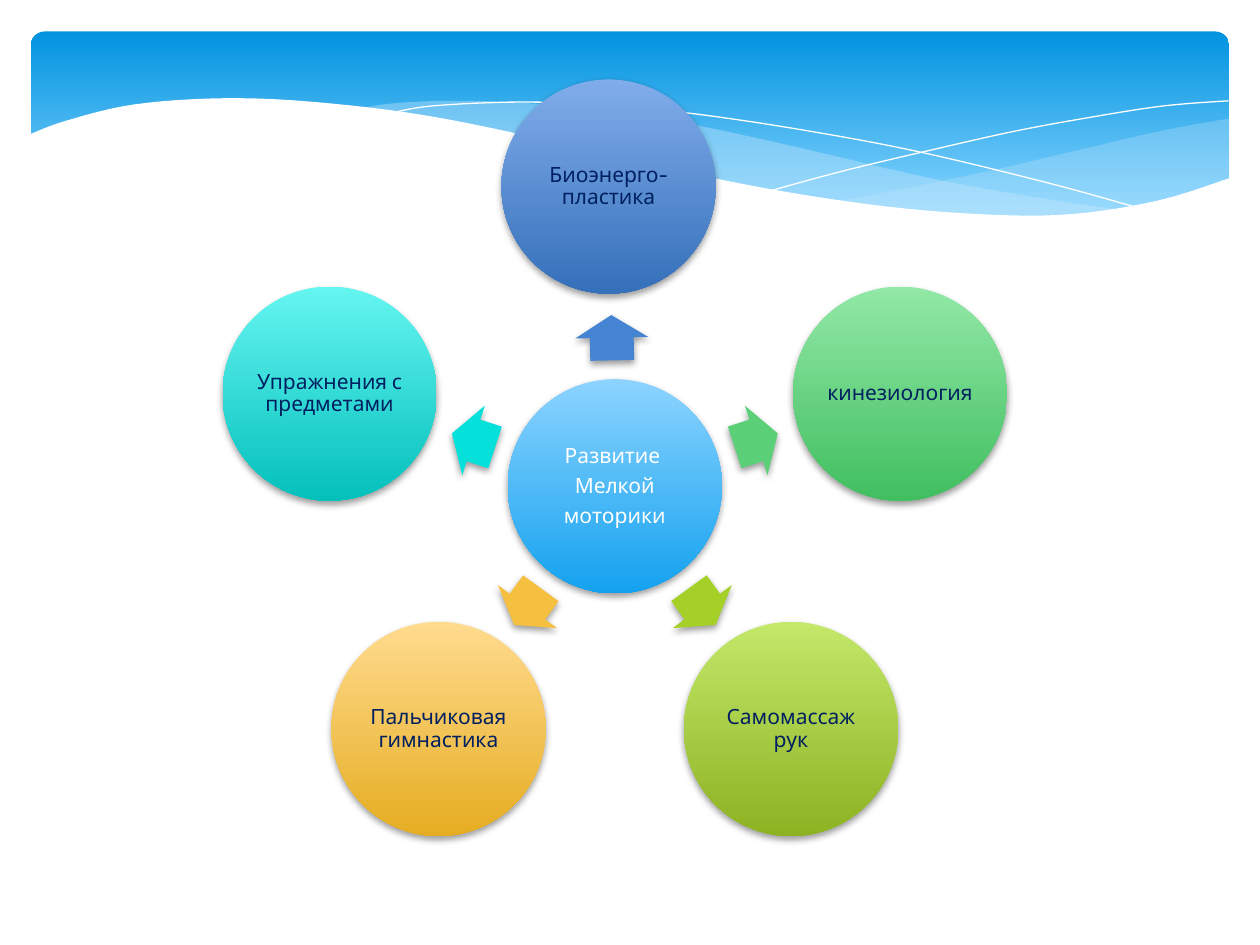
from math import cos, radians, sin

from lxml.etree import SubElement
from pptx import Presentation
from pptx.dml.color import RGBColor
from pptx.enum.shapes import MSO_SHAPE as SHAPE
from pptx.enum.text import MSO_ANCHOR as ANCHOR, PP_ALIGN as ALIGN
from pptx.oxml.ns import qn
from pptx.util import Inches, Pt

COLORS = {
    "white": "FFFFFF", "navy": "002060", "mist": "C6E7FC", "shadow": "000000",
    "sky_top": "0293E0", "sky_bottom": "83D3FE",
    "hub_top": "8CD3FF", "hub_bottom": "14A2EF",
    "blue": "4584D3", "blue_top": "80ACEA", "blue_bottom": "3570BA",
    "green": "5BD078", "green_top": "92E8A6", "green_bottom": "41BF60",
    "lime": "A5D028", "lime_top": "C3E86A", "lime_bottom": "8DB222",
    "amber": "F5C040", "amber_top": "FFDB8E", "amber_bottom": "E6AD22",
    "teal": "05E0DB", "teal_top": "65F5F1", "teal_bottom": "04C0BB",
}
FONT = "Cabin"
CENTER_X, CENTER_Y = 4.88, 3.86
NODE_RADIUS, ARROW_RADIUS = 2.38, 1.18
DIAMETER, ARROW_W, ARROW_H = 1.7, 0.36, 0.58
NODES = [
    ("Биоэнерго-пластика", "blue", 268.8),
    ("кинезиология", "green", 342),
    ("Самомассаж рук", "lime", 54),
    ("Пальчиковая гимнастика", "amber", 126),
    ("Упражнения с предметами", "teal", 198),
]
RIGHT_BAND = [
    [(9.76, 0.94), (9.21, 1.04), (8.61, 1.18), (7.79, 1.37), (7.06, 1.52), (6.61, 1.6)],
    [(6.61, 1.6), (7.19, 1.67), (7.69, 1.71), (8.24, 1.72), (8.72, 1.69),
     (9.21, 1.6), (9.49, 1.52), (9.76, 1.41)],
]
LONG_BAND = [
    [(8.93, 1.67), (8.37, 1.59), (7.41, 1.42), (6.29, 1.16), (5.55, 1), (4.89, 0.89),
     (4.2, 0.82), (3.61, 0.8), (3.13, 0.82), (2.86, 0.86)],
    [(2.86, 0.86), (3.62, 0.97), (4.49, 1.16), (5.3, 1.35), (6.01, 1.5), (6.8, 1.63),
     (7.48, 1.7), (8.07, 1.73), (8.57, 1.71), (8.93, 1.67)],
]
FALLING_LINE = [
    [(3.09, 0.9), (3.44, 0.84), (4.16, 0.81), (4.89, 0.84), (5.56, 0.91), (6.36, 1.03),
     (7.27, 1.2), (8.31, 1.45), (9.07, 1.66)],
]
RISING_LINE = [
    [(6.13, 1.51), (6.72, 1.35), (7.48, 1.17), (8.06, 1.04), (8.66, 0.93),
     (9.24, 0.84), (9.75, 0.8)],
]
WHITE_WAVE = [
    [(9.77, 1.41), (9.2, 1.59), (8.5, 1.7), (7.78, 1.7), (6.88, 1.62), (5.79, 1.44),
     (4.47, 1.14), (3.4, 0.92), (2.5, 0.81), (1.77, 0.78), (1.06, 0.83),
     (0.52, 0.96), (0.23, 1.07)],
    [(0.23, 2.24), (9.77, 2.24)],
]


def rgb(name):
    """Return the named palette colour."""
    return RGBColor.from_string(COLORS[name])


def set_alpha(color, percent):
    """Add an opacity to a colour element."""
    SubElement(color, qn("a:alpha"), val=str(percent * 1000))


def smooth(points, steps=6):
    """Return points along a Catmull-Rom curve through the given points."""
    padded = [points[0], *points, points[-1]]
    curve = [points[0]]
    for a, b, c, d in zip(padded, padded[1:], padded[2:], padded[3:]):
        for step in range(1, steps + 1):
            t = step / steps
            curve.append(tuple(
                q + t * (r - p) / 2 + t**2 * (2 * p - 5 * q + 4 * r - s) / 2
                + t**3 * (3 * q - p - 3 * r + s) / 2
                for p, q, r, s in zip(a, b, c, d)))
    return curve


def add_wave(slide, curves, fill=None, alpha=100):
    """Draw a filled band, or a white hairline when no fill is given."""
    points = [(Inches(x), Inches(y)) for curve in curves for x, y in smooth(curve)]
    builder = slide.shapes.build_freeform(*points[0])
    builder.add_line_segments(points[1:], close=fill is not None)
    sp = builder.convert_to_shape()
    sp.shadow.inherit = False
    if fill is None:
        sp.fill.background()
        sp.line.color.rgb = rgb("white")
        sp.line.width = Pt(0)
        return
    sp.fill.solid()
    sp.fill.fore_color.rgb = rgb(fill)
    sp.line.fill.background()
    if alpha < 100:
        set_alpha(sp.element.spPr.find(f"{qn('a:solidFill')}/{qn('a:srgbClr')}"), alpha)


def set_gradient(sp, name, end=1.0):
    """Fill a shape from the named top colour down to its bottom colour."""
    sp.fill.gradient()
    sp.fill.gradient_angle = 270
    first, last = sp.fill.gradient_stops
    first.color.rgb, first.position = rgb(f"{name}_top"), 0
    last.color.rgb, last.position = rgb(f"{name}_bottom"), end


def add_plain_shape(slide, kind, x, y, w, h):
    """Add an unlined shape without shadow, centred on a point."""
    sp = slide.shapes.add_shape(
        kind, Inches(x - w / 2), Inches(y - h / 2), Inches(w), Inches(h))
    sp.shadow.inherit = False
    sp.line.fill.background()
    return sp


def add_shadow(sp):
    """Give a shape a soft shadow straight below it."""
    effects = sp.element.spPr.find(qn("a:effectLst"))
    shadow = SubElement(effects, qn("a:outerShdw"), blurRad=str(Pt(4)),
                        dist=str(Pt(2)), dir="5400000", rotWithShape="0")
    color = SubElement(shadow, qn("a:srgbClr"), val=COLORS["shadow"])
    set_alpha(color, 38)


def add_circle(slide, text, color, x, y, text_color="navy"):
    """Add a gradient circle with centred text."""
    sp = add_plain_shape(slide, SHAPE.OVAL, x, y, DIAMETER, DIAMETER)
    set_gradient(sp, color)
    add_shadow(sp)
    tf = sp.text_frame
    tf.text = text
    tf.word_wrap = True
    tf.vertical_anchor = ANCHOR.MIDDLE
    tf.margin_left = tf.margin_right = tf.margin_top = tf.margin_bottom = Inches(0.02)
    for p in tf.paragraphs:
        p.alignment = ALIGN.CENTER
        p.line_spacing = 0.9
        p.space_after = Pt(4.2)
        for r in p.runs:
            r.font.name = FONT
            r.font.size = Pt(12)
            r.font.color.rgb = rgb(text_color)


def add_arrow(slide, color, x, y, angle):
    """Add a block arrow turned to point outwards."""
    sp = add_plain_shape(slide, SHAPE.RIGHT_ARROW, x, y, ARROW_W, ARROW_H)
    sp.adjustments[0], sp.adjustments[1] = 0.6, 0.5
    sp.rotation = angle
    sp.fill.solid()
    sp.fill.fore_color.rgb = rgb(color)
    add_shadow(sp)


def around_center(radius, angle):
    """Return the point at a radius and clockwise angle from the hub."""
    turn = radians(angle)
    return CENTER_X + radius * cos(turn), CENTER_Y + radius * sin(turn)


def add_header(slide):
    """Draw the sky panel and its waves."""
    panel = add_plain_shape(slide, SHAPE.ROUNDED_RECTANGLE, 5, 1.03, 9.51, 1.56)
    panel.adjustments[0] = 0.07
    set_gradient(panel, "sky", 0.9)
    add_wave(slide, RIGHT_BAND, "mist", 29)
    add_wave(slide, LONG_BAND, "mist", 40)
    add_wave(slide, FALLING_LINE)
    add_wave(slide, RISING_LINE)
    add_wave(slide, WHITE_WAVE, "white")


def main():
    """Build the slide and save it."""
    prs = Presentation()
    prs.slide_width, prs.slide_height = Inches(10), Inches(7.5)
    slide = prs.slides.add_slide(prs.slide_layouts[6])
    add_header(slide)
    add_circle(slide, "Развитие \nМелкой\nмоторики", "hub", CENTER_X, CENTER_Y, "white")
    for text, color, angle in NODES:
        add_arrow(slide, color, *around_center(ARROW_RADIUS, angle), angle)
        add_circle(slide, text, color, *around_center(NODE_RADIUS, angle))
    prs.save("out.pptx")


if __name__ == "__main__":
    main()
